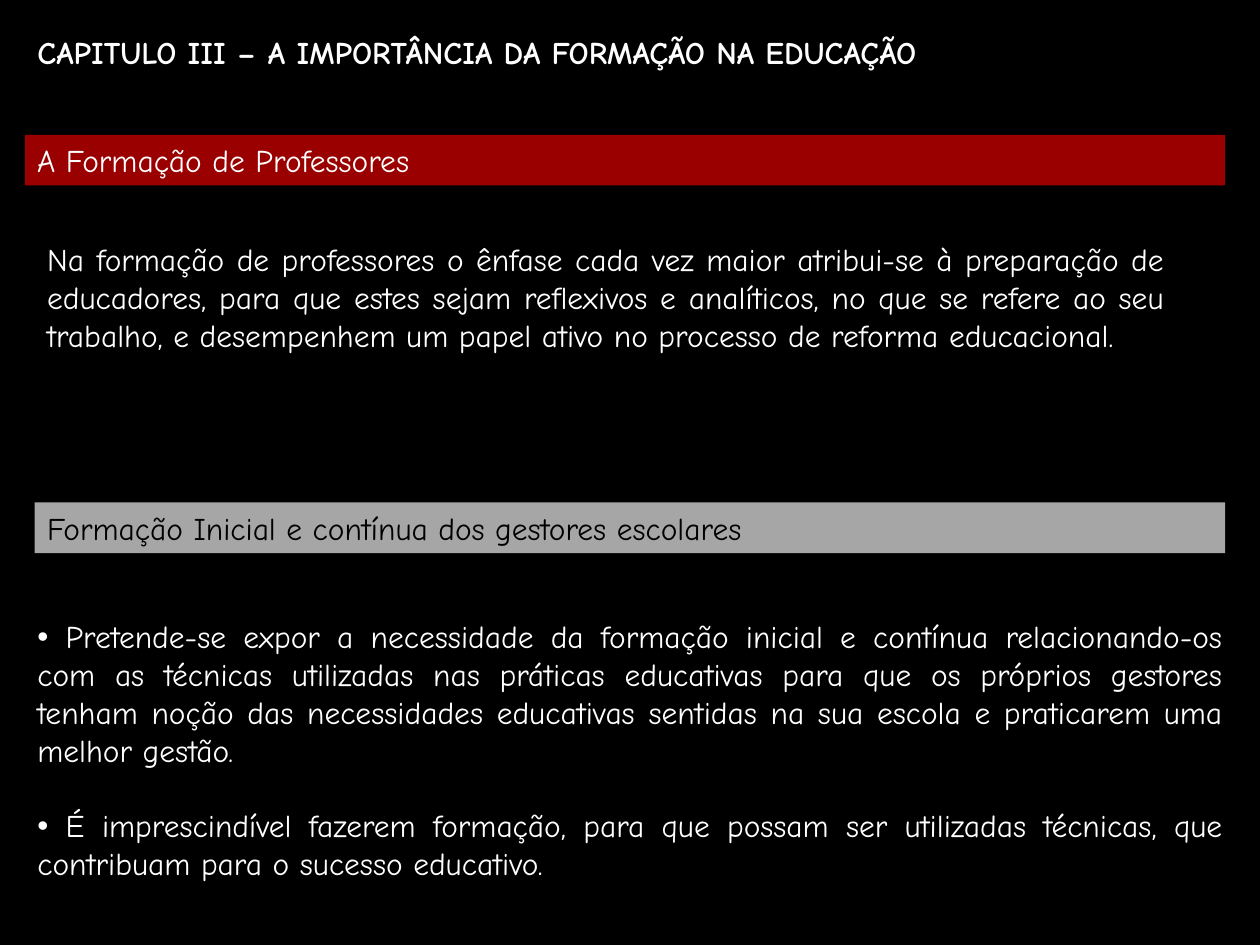
from lxml import etree
from pptx import Presentation
from pptx.dml.color import RGBColor
from pptx.enum.shapes import MSO_SHAPE
from pptx.enum.text import MSO_ANCHOR, MSO_AUTO_SIZE, PP_ALIGN
from pptx.oxml.ns import qn
from pptx.util import Cm, Pt

RECTANGLE = MSO_SHAPE.RECTANGLE
TOP = MSO_ANCHOR.TOP
LEFT, JUSTIFY = PP_ALIGN.LEFT, PP_ALIGN.JUSTIFY
NO_FIT = MSO_AUTO_SIZE.NONE

FONT = "Comic Neue"
COLORS = {"black": "000000", "white": "FFFFFF", "red": "9A0000", "gray": "A6A6A6"}

TITLE = "CAPITULO III – A IMPORTÂNCIA DA FORMAÇÃO NA EDUCAÇÃO"
TEACHERS = (
    "Na formação de professores o ênfase cada vez maior atribui-se à preparação de "
    "educadores, para que estes sejam reflexivos e analíticos, no que se refere ao seu "
    "trabalho, e desempenhem um papel ativo no processo de reforma educacional."
)
MANAGERS = [
    " Pretende-se expor a necessidade da formação inicial e contínua relacionando-os "
    "com as técnicas utilizadas nas práticas educativas para que os próprios gestores "
    "tenham noção das necessidades educativas sentidas na sua escola e praticarem uma "
    "melhor gestão.",
    " É imprescindível fazerem formação, para que possam ser utilizadas técnicas, que "
    "contribuam para o sucesso educativo.",
]


def rgb(name):
    return RGBColor.from_string(COLORS[name])


def place(shape, left, top, width, height):
    shape.left, shape.top = Cm(left), Cm(top)
    shape.width, shape.height = Cm(width), Cm(height)


def set_bullet(para):
    properties = para._p.get_or_add_pPr()
    properties.set("marL", "0")
    properties.set("indent", "0")
    etree.SubElement(properties, qn("a:buFont")).set("typeface", "Arial")
    etree.SubElement(properties, qn("a:buChar")).set("char", "•")


def write_text(shape, *texts, color="white", bold=False, align=LEFT, bullet=False, gap=0):
    """Fill a shape with one paragraph per text, gap points apart."""
    frame = shape.text_frame
    frame.word_wrap = True
    frame.auto_size = NO_FIT
    frame.vertical_anchor = TOP
    for index, text in enumerate(texts):
        para = frame.add_paragraph() if index else frame.paragraphs[0]
        para.alignment = align
        para.space_before = Pt(gap if index else 0)
        if bullet:
            set_bullet(para)
        span = para.add_run()
        span.text = text
        span.font.name = FONT
        span.font.size = Pt(18)
        span.font.bold = bold
        span.font.color.rgb = rgb(color)


def add_heading_bar(page, text, box, fill, **text_format):
    bar = page.shapes.add_shape(RECTANGLE, *map(Cm, box))
    bar.shadow.inherit = False
    bar.fill.solid()
    bar.fill.fore_color.rgb = rgb(fill)
    bar.line.fill.background()
    write_text(bar, text, **text_format)


def main():
    deck = Presentation()
    deck.slide_width, deck.slide_height = Cm(25.4), Cm(19.05)
    page = deck.slides.add_slide(deck.slide_layouts[1])
    page.background.fill.solid()
    page.background.fill.fore_color.rgb = rgb("black")

    # Chapter title
    title, body = page.placeholders
    place(title, 0.5, 0.53, 24.2, 1.55)
    write_text(title, TITLE, bold=True)

    # Section on teachers
    add_heading_bar(page, "A Formação de Professores", (0.5, 2.72, 24.2, 1.02), "red",
                    align=JUSTIFY)
    box = page.shapes.add_textbox(Cm(0.7), Cm(4.72), Cm(23.02), Cm(3.33))
    write_text(box, TEACHERS, align=JUSTIFY)

    # Section on school managers
    add_heading_bar(page, "Formação Inicial e contínua dos gestores escolares",
                    (0.7, 10.13, 24, 1.02), "gray", color="black")
    place(body, 0.5, 12.32, 24.4, 6.4)
    write_text(body, *MANAGERS, align=JUSTIFY, bullet=True, gap=21.6)

    deck.save("out.pptx")


if __name__ == "__main__":
    main()
